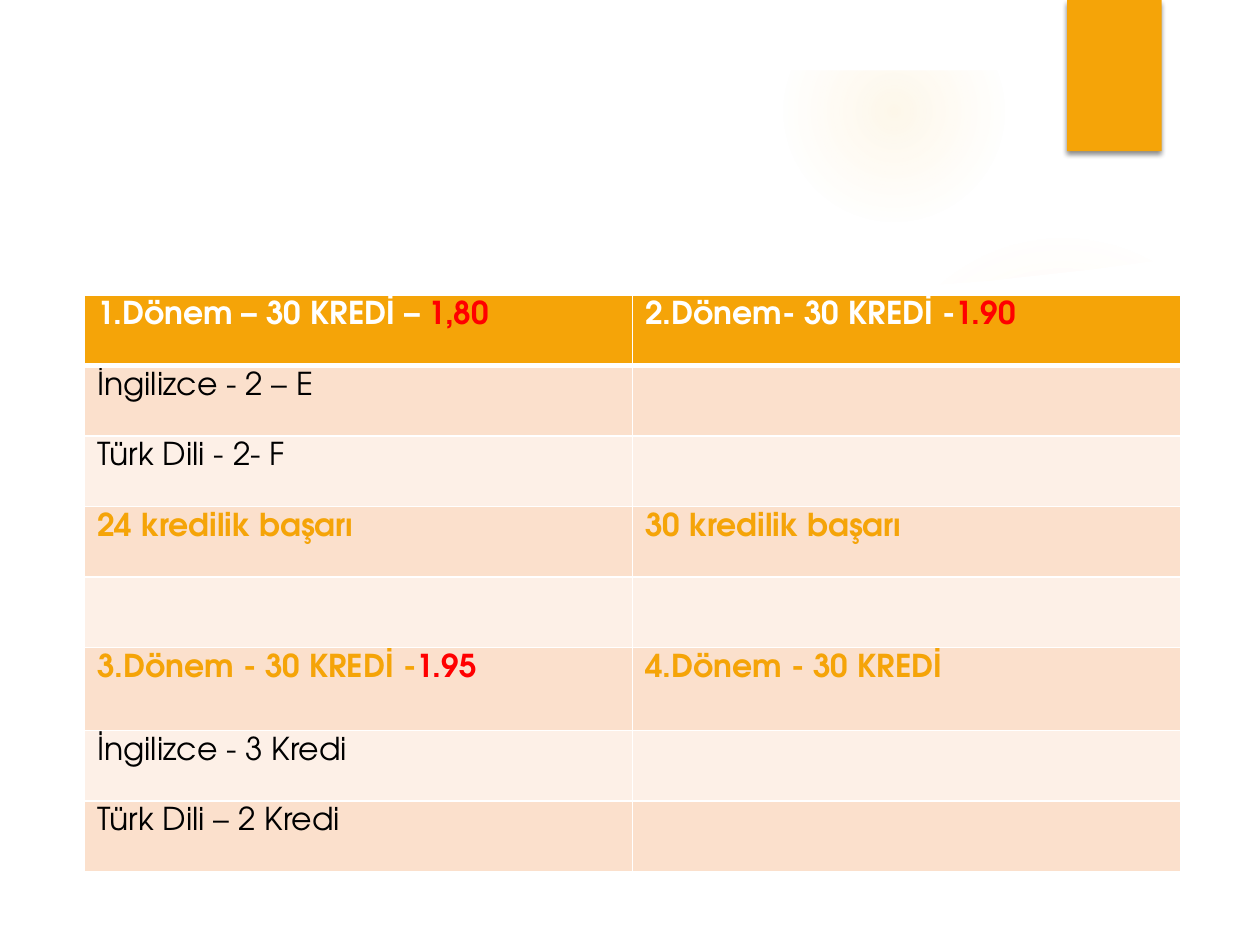
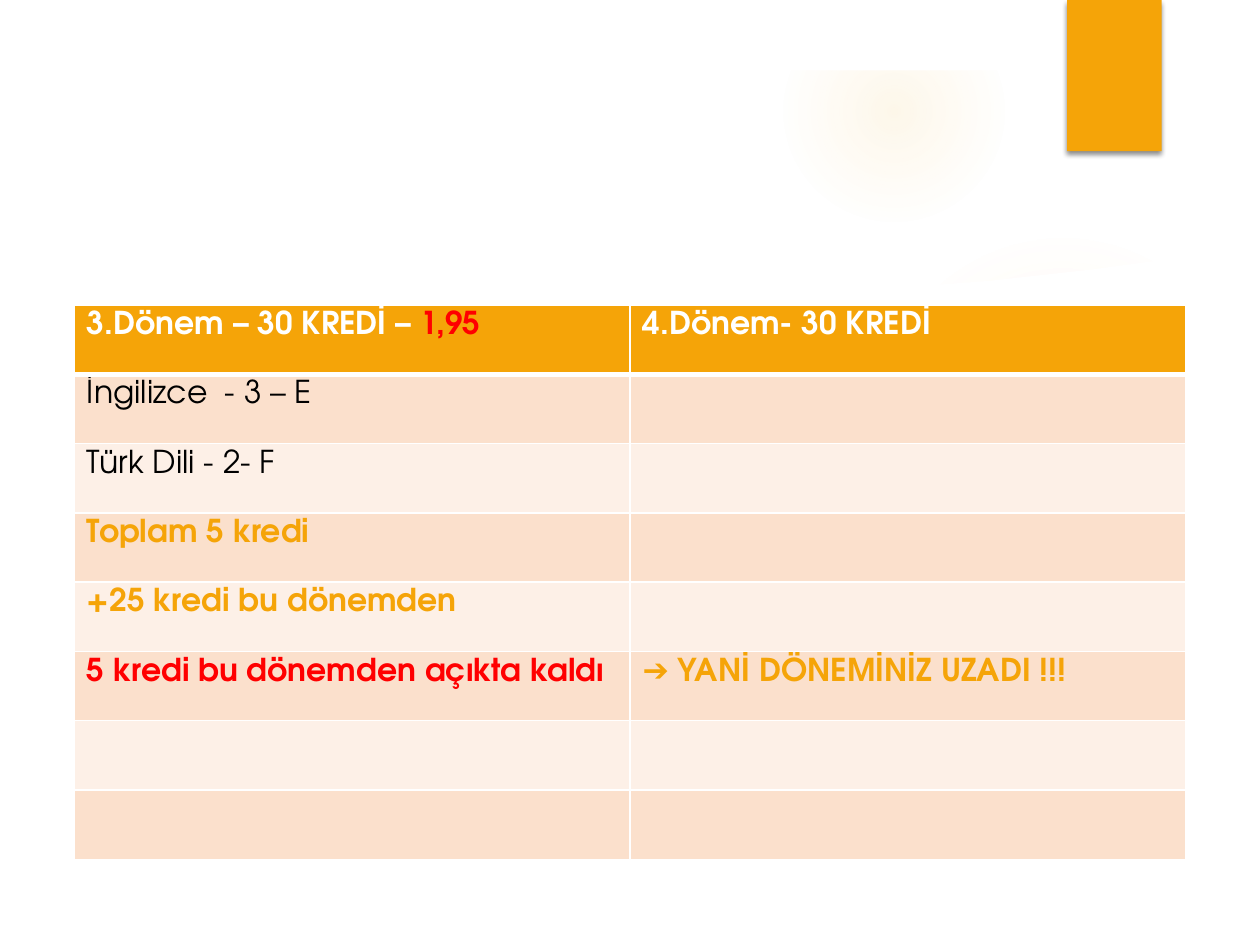
from lxml import etree
from pptx import Presentation
from pptx.dml.color import RGBColor
from pptx.enum.shapes import MSO_SHAPE
from pptx.oxml.ns import qn
from pptx.util import Inches, Pt

RECTANGLE, OVAL = MSO_SHAPE.RECTANGLE, MSO_SHAPE.OVAL

WHITE = RGBColor(0xFF, 0xFF, 0xFF)
BLACK = RGBColor(0x00, 0x00, 0x00)
RED = RGBColor(0xFF, 0x00, 0x00)
ORANGE = RGBColor(0xF5, 0xA4, 0x08)
GLOW = RGBColor(0xFA, 0xC9, 0x6A)
DARK_BAND = RGBColor(0xFB, 0xE0, 0xCC)
LIGHT_BAND = RGBColor(0xFD, 0xF0, 0xE7)

FONT = "TeX Gyre Adventor"
SLIDE_WIDTH, SLIDE_HEIGHT = 10, 7.5

# Each glow: left, top, diameter, then (position %, opacity %) stops
GLOWS = [
    (6.89, 1.83, 3.08, [(0, 7), (36, 6), (69, 0)]),
    (6.22, 0.01, 1.75, [(0, 14), (36, 7), (73, 0)]),
]
STREAK = [(6.99, 2.34), (7.9, 2.31), (9.56, 2.08), (9.51, 1.74), (8.92, 1.92),
          (8.26, 2.08), (7.62, 2.2), (6.96, 2.29)]
PANEL = [(0.53, 2.03), (0.53, 6.99), (9.47, 6.99), (9.47, 2.03), (8.66, 2.14),
         (7.85, 2.23), (7.04, 2.29), (6.25, 2.33), (5.48, 2.34), (4.74, 2.34),
         (4.04, 2.32), (3.38, 2.29), (2.77, 2.26), (2.22, 2.22), (1.32, 2.13)]
FRAME_OUTER = [(0, 0), (0, SLIDE_HEIGHT), (SLIDE_WIDTH, SLIDE_HEIGHT), (SLIDE_WIDTH, 0)]
FRAME_INNER = [(9.45, 6.95), (0.56, 6.95), (0.56, 0.56), (9.45, 0.56)]

# Each cell is a list of (text, colour) spans
FIRST_TERMS = [
    ([("1.Dönem – 30 KREDİ – ", WHITE), ("1,80", RED)],
     [("2.Dönem- 30 KREDİ -", WHITE), ("1.90", RED)]),
    ([("İngilizce - 2 – E", BLACK)], []),
    ([("Türk Dili - 2- F", BLACK)], []),
    ([("24 kredilik başarı", ORANGE)], [("30 kredilik başarı", ORANGE)]),
    ([], []),
    ([("3.Dönem - 30 KREDİ -", ORANGE), ("1.95", RED)],
     [("4.Dönem - 30 KREDİ", ORANGE)]),
    ([("İngilizce - 3 Kredi", BLACK)], []),
    ([("Türk Dili – 2 Kredi", BLACK)], []),
]
LATER_TERMS = [
    ([("3.Dönem – 30 KREDİ – ", WHITE), ("1,95", RED)],
     [("4.Dönem- 30 KREDİ", WHITE)]),
    ([("İngilizce  - 3 – E", BLACK)], []),
    ([("Türk Dili - 2- F", BLACK)], []),
    ([("Toplam 5 kredi", ORANGE)], []),
    ([("+25 kredi bu dönemden", ORANGE)], []),
    ([("5 kredi bu dönemden açıkta kaldı", RED)],
     [("➔ YANİ DÖNEMİNİZ UZADI !!!", ORANGE)]),
    ([], []),
    ([], []),
]


def add_element(parent, tag, **attributes):
    element = etree.SubElement(parent, qn(tag))
    for name, value in attributes.items():
        element.set(name, str(value))
    return element


def paint(shape, colour):
    shape.shadow.inherit = False
    shape.line.fill.background()
    shape.fill.solid()
    shape.fill.fore_color.rgb = colour


def add_glow(slide, left, top, diameter, stops):
    glow = slide.shapes.add_shape(OVAL, Inches(left), Inches(top),
                                  Inches(diameter), Inches(diameter))
    paint(glow, GLOW)
    properties = glow.element.spPr
    solid = properties.find(qn("a:solidFill"))
    gradient = etree.Element(qn("a:gradFill"), rotWithShape="1")
    stop_list = add_element(gradient, "a:gsLst")
    for position, opacity in stops:
        stop = add_element(stop_list, "a:gs", pos=position * 1000)
        colour = add_element(stop, "a:srgbClr", val=GLOW)
        add_element(colour, "a:alpha", val=opacity * 1000)
    circle = add_element(gradient, "a:path", path="circle")
    add_element(circle, "a:fillToRect", l=50000, t=50000, r=50000, b=50000)
    properties.replace(solid, gradient)


def add_outline(slide, *contours):
    """Draw closed white contours, given in inches, as one shape."""
    first, *others = [[(Inches(x), Inches(y)) for x, y in contour]
                      for contour in contours]
    builder = slide.shapes.build_freeform(*first[0])
    builder.add_line_segments(first[1:], close=True)
    for contour in others:
        builder.move_to(*contour[0])
        builder.add_line_segments(contour[1:], close=True)
    outline = builder.convert_to_shape()
    paint(outline, WHITE)
    return outline


def add_background(slide):
    for glow in GLOWS:
        add_glow(slide, *glow)
    # Faint streak above the panel
    streak = add_outline(slide, STREAK)
    streak.rotation = 350.2
    colour = streak.element.spPr.find(qn("a:solidFill"))[0]
    add_element(colour, "a:alpha", val=20000)
    # White panel with a curved top, then the frame round the slide
    add_outline(slide, PANEL)
    add_outline(slide, FRAME_OUTER, FRAME_INNER)


def add_corner_tab(slide, left, top, width, height):
    tab = slide.shapes.add_shape(RECTANGLE, Inches(left), Inches(top),
                                 Inches(width), Inches(height))
    paint(tab, ORANGE)
    effects = tab.element.spPr.find(qn("a:effectLst"))
    shadow = add_element(effects, "a:outerShdw", blurRad=Pt(3), dist=Pt(2),
                         dir=90 * 60000, rotWithShape=0)
    colour = add_element(shadow, "a:srgbClr", val=BLACK)
    add_element(colour, "a:alpha", val=45000)


def add_borders(cell, top_width, bottom_width):
    properties = cell._tc.get_or_add_tcPr()
    widths = {"a:lnL": 1, "a:lnR": 1, "a:lnT": top_width, "a:lnB": bottom_width}
    for index, (tag, width) in enumerate(widths.items()):
        line = etree.Element(qn(tag), w=str(Pt(width)))
        add_element(add_element(line, "a:solidFill"), "a:srgbClr", val=WHITE)
        properties.insert(index, line)


def fill_cell(cell, spans, colour):
    cell.margin_left = cell.margin_right = Inches(0.1)
    cell.margin_top = cell.margin_bottom = Inches(0.05)
    cell.fill.solid()
    cell.fill.fore_color.rgb = colour
    para = cell.text_frame.paragraphs[0]
    para.font.name = FONT
    para.font.size = Pt(18)
    para.font.bold = any(span_colour != BLACK for _, span_colour in spans)
    for text, span_colour in spans:
        span = para.add_run()
        span.text = text
        span.font.color.rgb = span_colour


def add_term_table(slide, left, top, column_width, row_heights, rows):
    frame = slide.shapes.add_table(len(rows), 2, Inches(left), Inches(top),
                                   Inches(2 * column_width), Inches(sum(row_heights)))
    table = frame.table
    table.first_row = table.horz_banding = False
    for column in table.columns:
        column.width = Inches(column_width)
    for index, (row, height) in enumerate(zip(rows, row_heights)):
        table.rows[index].height = Inches(height)
        band = ORANGE if index == 0 else DARK_BAND if index % 2 else LIGHT_BAND
        for column, spans in enumerate(row):
            cell = table.cell(index, column)
            fill_cell(cell, spans, band)
            add_borders(cell, 3 if index == 1 else 1, 3 if index == 0 else 1)


def add_term_slide(deck, *table_layout):
    slide = deck.slides.add_slide(deck.slide_layouts[6])
    add_background(slide)
    add_corner_tab(slide, 8.47, 0, 0.75, 1.2)
    add_term_table(slide, *table_layout)


def main():
    deck = Presentation()
    deck.slide_width = Inches(SLIDE_WIDTH)
    deck.slide_height = Inches(SLIDE_HEIGHT)
    first_heights = [0.56] * 5 + [0.66] + [0.56] * 2
    add_term_slide(deck, 0.67, 2.34, 4.35, first_heights, FIRST_TERMS)
    add_term_slide(deck, 0.59, 2.42, 4.41, [0.55] * 8, LATER_TERMS)
    deck.save("out.pptx")


if __name__ == "__main__":
    main()
